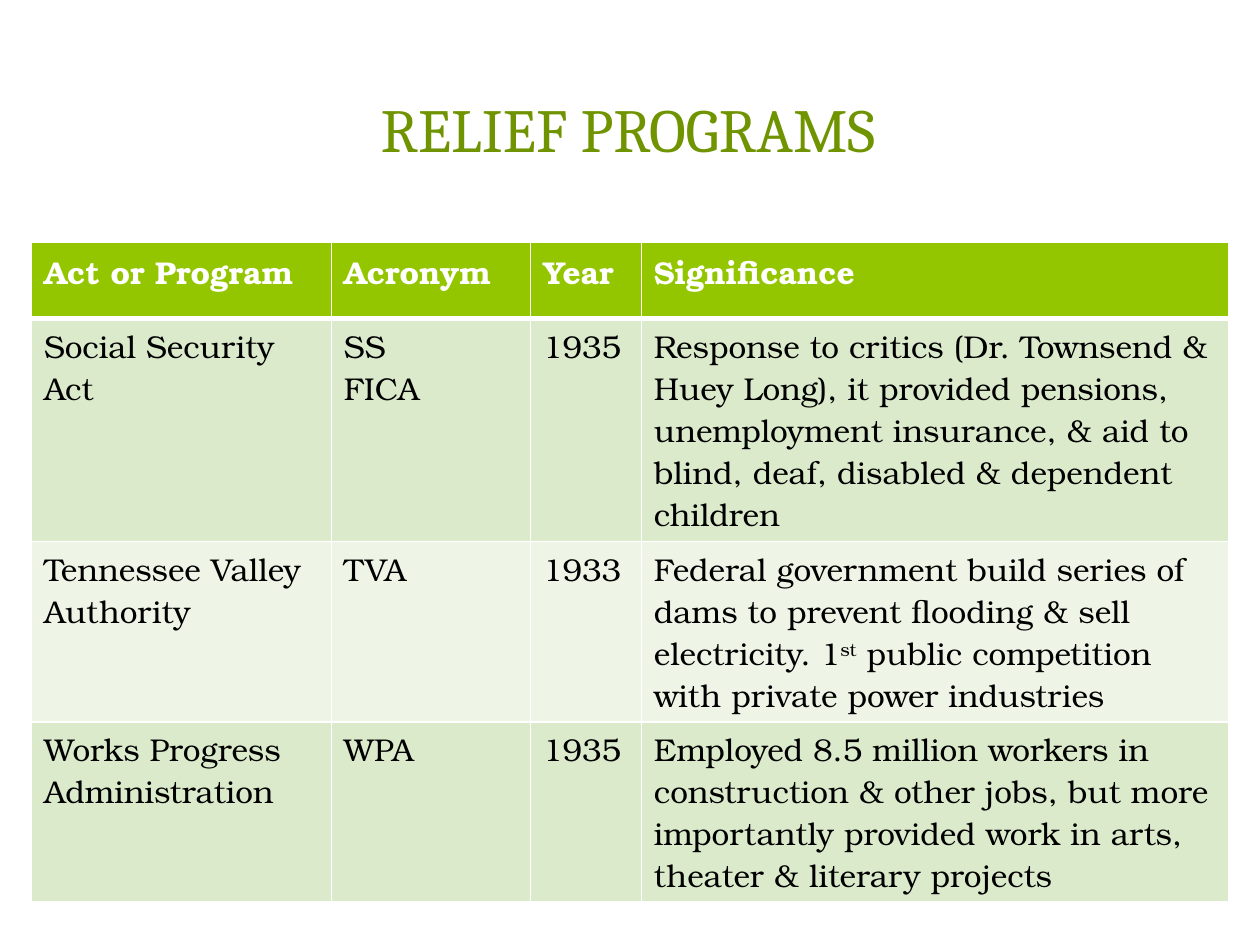
from dataclasses import dataclass

from lxml.etree import SubElement
from pptx import Presentation
from pptx.dml.color import RGBColor
from pptx.enum.shapes import MSO_SHAPE
from pptx.enum.text import MSO_ANCHOR, PP_ALIGN
from pptx.oxml.ns import qn
from pptx.util import Inches, Pt


@dataclass(frozen=True)
class Theme:
    """Colours, fonts and type sizes of the slide."""
    title_font: str = "Cambria"
    body_font: str = "TeX Gyre Bonum"
    title_size: int = 35
    body_size: int = 18
    title_ink: str = "6F9400"
    header_ink: str = "FFFFFF"
    body_ink: str = "000000"
    panel_fill: str = "FFFFFF"
    header_fill: str = "94C600"
    bands: tuple = ("DCEACC", "EEF5E7")
    rule: str = "FFFFFF"
    rule_width: int = 1
    header_rule_width: int = 3


THEME = Theme()
GRID_COLUMNS, GRID_ROWS = 10, 7.5
WIDTH, HEIGHT = Inches(10), Inches(7.5)
PAGE_BOX = (0.1, 0.11, 9.8, 7.29)
BANNER_BOX = (0.3, 0.3, 9.4, 1.45)
BANNER_INNER_BOX = (0.41, 0.41, 9.17, 1.22)
TITLE_BOX = (0.47, 0.45, 9.03, 1.14)
TABLE_BOX = (0.25, 1.92, 9.5, 5.24)
COLUMN_PARTS = (2.38, 1.58, 0.88, 4.66)
ROW_PARTS = (0.61, 1.77, 1.43, 1.43)
PAGE_ROUNDING = 0.02
BANNER_OPACITY = "83000"
SUPERSCRIPT = "30000"

HEADINGS = ("Act or Program", "Acronym", "Year", "Significance")
PROGRAMS = (
    ("Social Security Act", ("SS", "FICA"), "1935",
     "Response to critics (Dr. Townsend & Huey Long), it provided pensions, "
     "unemployment insurance, & aid to blind, deaf, disabled & dependent children"),
    ("Tennessee Valley Authority", "TVA", "1933",
     ((("Federal government build series of dams to prevent flooding & sell "
        "electricity. 1", None), ("st", SUPERSCRIPT),
       (" public competition with private power industries", None)),)),
    ("Works Progress Administration", "WPA", "1935",
     "Employed 8.5 million workers in construction & other jobs, but more "
     "importantly provided work in arts, theater & literary projects"),
)


def place(box):
    """Turn columns and rows of the slide grid into lengths."""
    left, top, width, height = box
    column, row = WIDTH / GRID_COLUMNS, HEIGHT / GRID_ROWS
    return (round(left * column), round(top * row),
            round(width * column), round(height * row))


def divide(total, parts):
    """Split a length in proportion to the parts."""
    return [round(total * part / sum(parts)) for part in parts]


def add_run(paragraph, text, font, size, ink, bold=False, baseline=None):
    """Append one styled run to a paragraph."""
    run = paragraph.add_run()
    run.text = text
    run.font.name, run.font.size, run.font.bold = font, Pt(size), bold
    run.font.color.rgb = RGBColor.from_string(ink)
    if baseline:
        run._r.get_or_add_rPr().set("baseline", baseline)


def write_cell(cell, content, ink, bold):
    """Write text, a tuple of paragraphs, or paragraphs made of runs."""
    paragraphs = (content,) if isinstance(content, str) else content
    for index, pieces in enumerate(paragraphs):
        frame = cell.text_frame
        paragraph = frame.add_paragraph() if index else frame.paragraphs[0]
        runs = ((pieces, None),) if isinstance(pieces, str) else pieces
        for text, baseline in runs:
            add_run(paragraph, text, THEME.body_font, THEME.body_size, ink, bold, baseline)


def rule_cell(cell, top_width, bottom_width):
    """Draw the four borders of a cell."""
    properties = cell._tc.get_or_add_tcPr()
    widths = {"a:lnL": THEME.rule_width, "a:lnR": THEME.rule_width,
              "a:lnT": top_width, "a:lnB": bottom_width}
    for side, width in widths.items():
        border = SubElement(properties, qn(side), w=str(Pt(width)))
        SubElement(SubElement(border, qn("a:solidFill")), qn("a:srgbClr"), val=THEME.rule)


def add_panel(slide, box, outline=MSO_SHAPE.RECTANGLE):
    """Place one plain panel in its box."""
    panel = slide.shapes.add_shape(outline, *place(box))
    panel.shadow.inherit = False
    panel.fill.solid()
    panel.fill.fore_color.rgb = RGBColor.from_string(THEME.panel_fill)
    panel.line.fill.background()
    return panel


def add_backdrop(slide, page_box, banner_box, inner_box):
    """Place the rounded page and the two-layer title banner."""
    page = add_panel(slide, page_box, MSO_SHAPE.ROUNDED_RECTANGLE)
    page.adjustments[0] = PAGE_ROUNDING
    banner = add_panel(slide, banner_box)
    tint = banner._element.spPr.find(qn("a:solidFill")).find(qn("a:srgbClr"))
    SubElement(tint, qn("a:alpha"), val=BANNER_OPACITY)
    add_panel(slide, inner_box)


def add_title(slide, box):
    """Place the centred slide title in its box."""
    frame = slide.shapes.add_textbox(*place(box)).text_frame
    frame.word_wrap = True
    frame.vertical_anchor = MSO_ANCHOR.MIDDLE
    heading = frame.paragraphs[0]
    heading.alignment = PP_ALIGN.CENTER
    add_run(heading, "RELIEF PROGRAMS", THEME.title_font, THEME.title_size, THEME.title_ink)


def add_programs(slide, box):
    """Place the banded table of programs in its box."""
    left, top, width, height = place(box)
    records = (HEADINGS, *PROGRAMS)
    table = slide.shapes.add_table(
        len(records), len(HEADINGS), left, top, width, height).table
    for column, share in zip(table.columns, divide(width, COLUMN_PARTS)):
        column.width = share
    for row, share in zip(table.rows, divide(height, ROW_PARTS)):
        row.height = share
    for index, record in enumerate(records):
        header = index == 0
        fill = THEME.header_fill if header else THEME.bands[(index - 1) % 2]
        ink = THEME.header_ink if header else THEME.body_ink
        top_rule = THEME.header_rule_width if index == 1 else THEME.rule_width
        bottom_rule = THEME.header_rule_width if header else THEME.rule_width
        for cell, content in zip(table.rows[index].cells, record):
            write_cell(cell, content, ink, header)
            rule_cell(cell, top_rule, bottom_rule)
            cell.fill.solid()
            cell.fill.fore_color.rgb = RGBColor.from_string(fill)


def main():
    """Build and save the slide."""
    deck = Presentation()
    deck.slide_width, deck.slide_height = WIDTH, HEIGHT
    slide = deck.slides.add_slide(deck.slide_layouts[6])
    add_backdrop(slide, PAGE_BOX, BANNER_BOX, BANNER_INNER_BOX)
    add_title(slide, TITLE_BOX)
    add_programs(slide, TABLE_BOX)
    deck.save("out.pptx")


if __name__ == "__main__":
    main()
